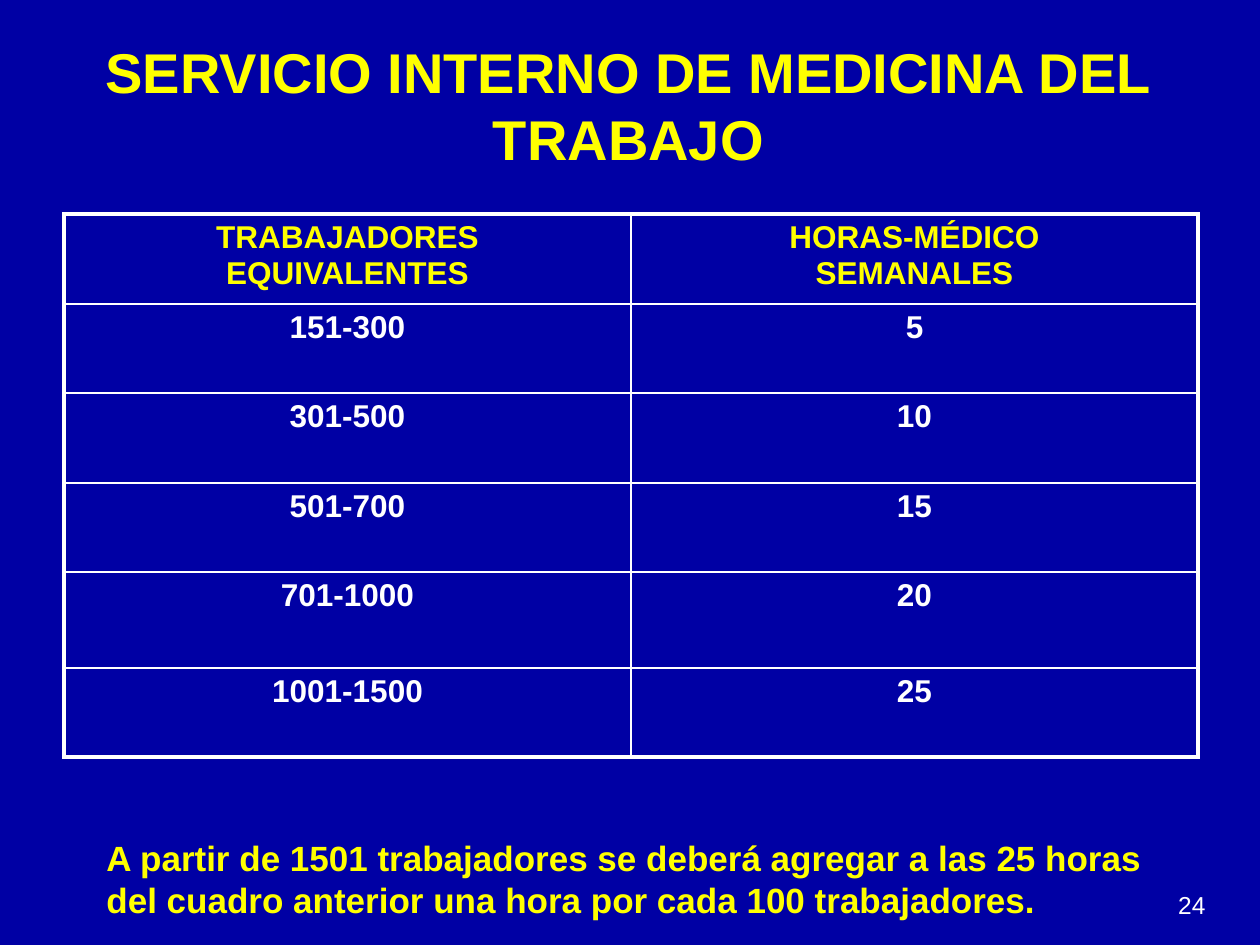
from lxml import etree
from pptx import Presentation
from pptx.dml.color import RGBColor
from pptx.enum.text import MSO_ANCHOR, MSO_AUTO_SIZE, PP_ALIGN
from pptx.oxml.ns import qn
from pptx.util import Emu, Pt

LEFT, CENTER, RIGHT = PP_ALIGN.LEFT, PP_ALIGN.CENTER, PP_ALIGN.RIGHT
TOP, MIDDLE, BOTTOM = MSO_ANCHOR.TOP, MSO_ANCHOR.MIDDLE, MSO_ANCHOR.BOTTOM
NO_AUTOFIT = MSO_AUTO_SIZE.NONE

PX_PER_INCH = 126
BLUE, YELLOW, WHITE = "0000A4", "FFFF00", "FFFFFF"
THIN, THICK = 1, 2.25

TITLE_FORMAT = {"name": "Arial", "size": Pt(32), "bold": True}
CELL_FORMAT = {"name": "Arial", "size": Pt(18), "bold": True}
NOTE_FORMAT = {"name": "Arial", "size": Pt(20), "bold": True}
NUMBER_FORMAT = {"name": "Arial", "size": Pt(14), "bold": False}

HOURS_ROWS = [
    ("TRABAJADORES\nEQUIVALENTES", "HORAS-MÉDICO\nSEMANALES"),
    ("151-300", "5"),
    ("301-500", "10"),
    ("501-700", "15"),
    ("701-1000", "20"),
    ("1001-1500", "25"),
]
ROW_HEIGHTS = [90, 89, 90, 89, 96, 89]


def px(length):
    return Emu(round(length * 914400 / PX_PER_INCH))


def color(value):
    return RGBColor.from_string(value)


def write_text(frame, text, values, text_color, align):
    frame.text = text
    for para in frame.paragraphs:
        para.alignment = align
        for span in para.runs:
            for name, value in values.items():
                setattr(span.font, name, value)
            span.font.color.rgb = color(text_color)


def add_title(page, box, text):
    title = page.shapes.title
    title.left, title.top, title.width, title.height = map(px, box)
    frame = title.text_frame
    frame.word_wrap = True
    frame.auto_size = NO_AUTOFIT
    frame.vertical_anchor = MIDDLE
    write_text(frame, text, TITLE_FORMAT, YELLOW, CENTER)


def add_text(page, box, text, values, text_color, align, anchor):
    frame = page.shapes.add_textbox(*map(px, box)).text_frame
    frame.word_wrap = True
    frame.vertical_anchor = anchor
    write_text(frame, text, values, text_color, align)


def set_borders(cell, widths):
    properties = cell._tc.get_or_add_tcPr()
    for index, (side, width) in enumerate(widths.items()):
        line = etree.Element(qn(f"a:ln{side}"), w=str(Pt(width)))
        fill = etree.SubElement(line, qn("a:solidFill"))
        etree.SubElement(fill, qn("a:srgbClr"), val=WHITE)
        properties.insert(index, line)


def add_hours_table(page, box, rows, heights):
    row_count, column_count = len(rows), len(rows[0])
    table = page.shapes.add_table(row_count, column_count, *map(px, box)).table
    for column in table.columns:
        column.width = px(box[2] // column_count)
    for row, height in zip(table.rows, heights):
        row.height = px(height)
    for row_index, texts in enumerate(rows):
        for column_index, text in enumerate(texts):
            cell = table.cell(row_index, column_index)
            text_color = YELLOW if row_index == 0 else WHITE
            write_text(cell.text_frame, text, CELL_FORMAT, text_color, CENTER)
            cell.vertical_anchor = TOP
            cell.fill.background()
            set_borders(cell, {
                "L": THICK if column_index == 0 else THIN,
                "R": THICK if column_index == column_count - 1 else THIN,
                "T": THICK if row_index == 0 else THIN,
                "B": THICK if row_index == row_count - 1 else THIN,
            })


def main():
    deck = Presentation()
    deck.slide_width, deck.slide_height = px(1260), px(945)
    page = deck.slides.add_slide(deck.slide_layouts.get_by_name("Title Only"))
    page.background.fill.solid()
    page.background.fill.fore_color.rgb = color(BLUE)

    add_text(page, (903, 861, 315, 65), "24", NUMBER_FORMAT, WHITE, RIGHT, BOTTOM)
    add_title(page, (42, 32, 1173, 146), "SERVICIO INTERNO DE MEDICINA DEL TRABAJO")
    add_hours_table(page, (64, 214, 1134, sum(ROW_HEIGHTS)), HOURS_ROWS, ROW_HEIGHTS)
    add_text(
        page, (94, 830, 1104, 97),
        "A partir de 1501 trabajadores se deberá agregar a las 25 horas "
        "del cuadro anterior una hora por cada 100 trabajadores.",
        NOTE_FORMAT, YELLOW, LEFT, TOP,
    )
    deck.save("out.pptx")


if __name__ == "__main__":
    main()
